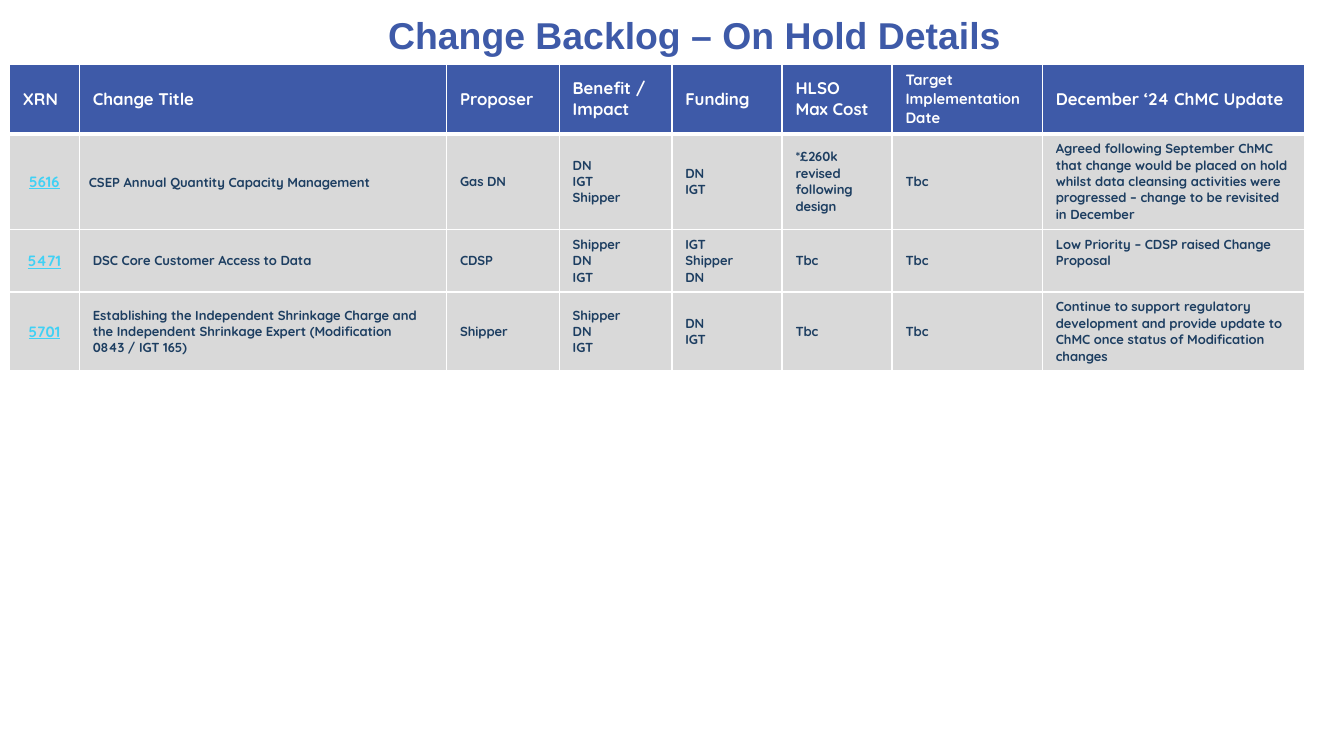
import pptx
import pptx.util
import pptx.dml.color
import pptx.enum.text
import pptx.oxml
import pptx.oxml.ns

Cm = pptx.util.Cm
Pt = pptx.util.Pt
ALIGN = pptx.enum.text.PP_ALIGN
MIDDLE = pptx.enum.text.MSO_ANCHOR.MIDDLE

HUES = {"blue": "3E5AA8", "white": "FFFFFF", "grey": "D9D9D9",
        "link": "40D1F5", "navy": "1D3E61"}

TITLE = "Change Backlog – On Hold Details"
HEAD = ["XRN", "Change Title", "Proposer", "Benefit / Impact", "Funding",
        "HLSO\nMax Cost", "Target Implementation Date",
        "December ‘24 ChMC Update"]
ROWS = [
    ["5616", "CSEP Annual Quantity Capacity Management", "Gas DN",
     "DN\nIGT\nShipper", "DN\nIGT", "*£260k revised following design", "Tbc",
     "Agreed following September ChMC that change would be placed on hold "
     "whilst data cleansing activities were progressed – change to be "
     "revisited in December"],
    ["5471", "DSC Core Customer Access to Data", "CDSP",
     "Shipper\nDN\nIGT", "IGT\nShipper\nDN", "Tbc", "Tbc",
     "Low Priority – CDSP raised Change Proposal"],
    ["5701", "Establishing the Independent Shrinkage Charge and the "
     "Independent Shrinkage Expert (Modification 0843 / IGT 165)", "Shipper",
     "Shipper\nDN\nIGT", "DN\nIGT", "Tbc", "Tbc",
     "Continue to support regulatory development and provide update to "
     "ChMC once status of Modification changes"],
]
WIDTHS = [1.32, 6.94, 2.13, 2.13, 2.08, 2.08, 2.84, 4.95]
HEIGHTS = [1.25, 1.8, 1.18, 1.48]


def rgb(name):
    return pptx.dml.color.RGBColor.from_string(HUES[name])


def style(para, face, size, hue, line=False):
    for run in para.runs:
        font = run.font
        font.name, font.size, font.bold = face, Pt(size), True
        font.color.rgb = rgb(hue)
        font.underline = line


def edge(cell, base):
    """Draw white borders; base is the width of the bottom one in points."""
    props = cell._tc.get_or_add_tcPr()
    for side, width in (("L", 1), ("R", 1), ("T", 1), ("B", base)):
        props.append(pptx.oxml.parse_xml(
            f'<a:ln{side} {pptx.oxml.ns.nsdecls("a")} w="{Pt(width)}">'
            f'<a:solidFill><a:srgbClr val="{HUES["white"]}"/></a:solidFill>'
            f'</a:ln{side}>'))


def fill_cell(cell, text, fill, size, hue, base=1, link=False):
    edge(cell, base)
    cell.fill.solid()
    cell.fill.fore_color.rgb = rgb(fill)
    cell.vertical_anchor = MIDDLE
    cell.text_frame.text = text
    for para in cell.text_frame.paragraphs:
        para.alignment = ALIGN.CENTER if link else ALIGN.LEFT
        style(para, "Quicksand", size, hue, link)


def add_title(slide, left, top, width, height):
    title = slide.shapes.title
    title.left, title.top = left, top
    title.width, title.height = width, height
    frame = title.text_frame
    frame.text = TITLE
    frame.vertical_anchor = MIDDLE
    frame.paragraphs[0].alignment = ALIGN.CENTER
    style(frame.paragraphs[0], "Arial", 20, "blue")


def add_grid(slide, left, top, width, height):
    table = slide.shapes.add_table(len(ROWS) + 1, len(HEAD),
                                   left, top, width, height).table
    table.horz_banding = False
    for col, part in zip(table.columns, WIDTHS):
        col.width = int(width * part / sum(WIDTHS))
    for row, part in zip(table.rows, HEIGHTS):
        row.height = int(height * part / sum(HEIGHTS))

    # Header row
    for c, text in enumerate(HEAD):
        size = 8 if text.startswith("Target") else 9
        fill_cell(table.cell(0, c), text, "blue", size, "white", base=3)

    # Change rows, with the reference number styled as a link
    for r, row in enumerate(ROWS, 1):
        for c, text in enumerate(row):
            link = c == 0
            fill_cell(table.cell(r, c), text, "grey", 8 if link else 7,
                      "link" if link else "navy", link=link)

    # Cells with their own spacing
    first = table.cell(1, 1)
    first.margin_left = first.margin_right = Cm(0.18)
    first.margin_top = first.margin_bottom = 0
    first.text_frame.paragraphs[0].line_spacing = 1.15
    table.cell(2, 7).margin_bottom = Cm(0.43)


def main():
    deck = pptx.Presentation()
    deck.slide_width, deck.slide_height = Cm(25.4), Cm(14.29)
    slide = deck.slides.add_slide(deck.slide_layouts[5])
    add_grid(slide, Cm(0.18), Cm(1.21), Cm(sum(WIDTHS)), Cm(sum(HEIGHTS)))
    add_title(slide, Cm(1.7), Cm(0.05), Cm(22.86), Cm(1.2))
    deck.save("out.pptx")


if __name__ == "__main__":
    main()
